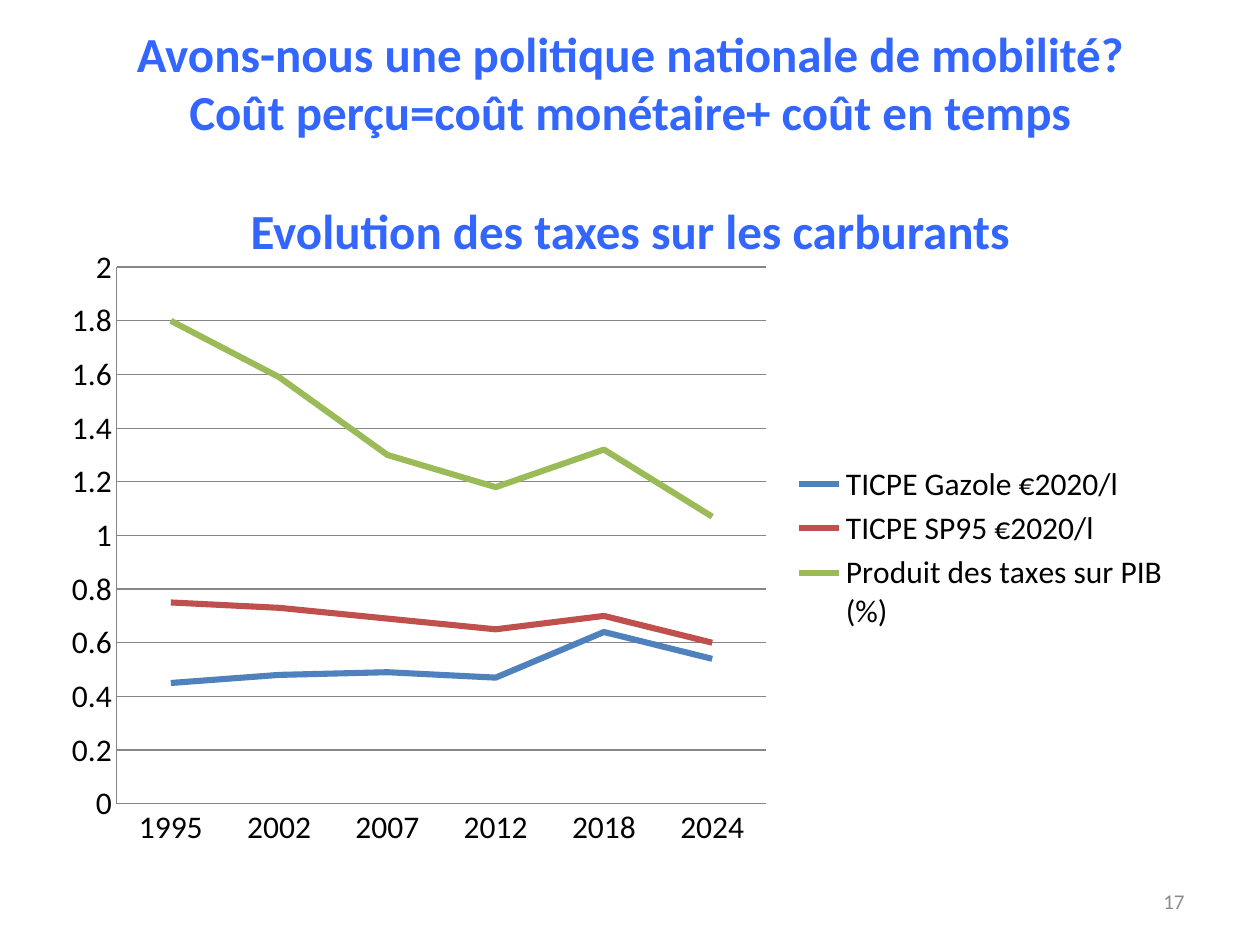
from dataclasses import dataclass

from pptx import Presentation
from pptx.chart.data import CategoryChartData
from pptx.dml.color import RGBColor
from pptx.enum.chart import XL_CHART_TYPE, XL_LEGEND_POSITION, XL_MARKER_STYLE, XL_TICK_MARK
from pptx.enum.text import MSO_ANCHOR, MSO_AUTO_SIZE, PP_ALIGN
from pptx.util import Inches, Pt

LINE = XL_CHART_TYPE.LINE
RIGHT = XL_LEGEND_POSITION.RIGHT
NO_MARK = XL_MARKER_STYLE.NONE
NO_TICK = XL_TICK_MARK.NONE
MIDDLE = MSO_ANCHOR.MIDDLE


@dataclass(frozen=True)
class Theme:
    face: str = "Calibri"
    head: str = "3366FF"
    ink: str = "000000"
    muted: str = "8C8C8C"
    grid: str = "868686"
    head_size: int = 28
    chart_size: int = 18
    note_size: int = 12


THEME = Theme()
YEARS = ["1995", "2002", "2007", "2012", "2018", "2024"]
TAXES = [
    ("TICPE Gazole €2020/l", "4F81BD", [0.45, 0.48, 0.49, 0.47, 0.64, 0.54]),
    ("TICPE SP95 €2020/l", "C0504D", [0.75, 0.73, 0.69, 0.65, 0.7, 0.6]),
    ("Produit des taxes sur PIB (%)", "9BBB59", [1.8, 1.59, 1.3, 1.18, 1.32, 1.07]),
]


def set_font(font, size, color, bold=False):
    font.name = THEME.face
    font.size = Pt(size)
    font.bold = bold
    font.color.rgb = RGBColor.from_string(color)


def set_line(line, color, width):
    line.color.rgb = RGBColor.from_string(color)
    line.width = Pt(width)


def write(frame, text, align, size, color, bold=False):
    frame.text = text
    frame.word_wrap = True
    frame.auto_size = MSO_AUTO_SIZE.NONE
    frame.vertical_anchor = MIDDLE
    for para in frame.paragraphs:
        para.alignment = align
        for run in para.runs:
            set_font(run.font, size, color, bold)


def add_title(slide):
    title = slide.shapes.title
    title.left, title.top = Inches(0.5), Inches(0.3)
    title.width, title.height = Inches(9), Inches(1.64)
    frame = title.text_frame
    write(
        frame,
        "Avons-nous une politique nationale de mobilité?\v"
        "Coût perçu=coût monétaire+ coût en temps\n"
        "Evolution des taxes sur les carburants",
        PP_ALIGN.CENTER, THEME.head_size, THEME.head, bold=True,
    )
    frame.paragraphs[0].space_before = Pt(0)
    frame.paragraphs[1].space_before = Pt(34)


def add_chart(slide):
    data = CategoryChartData()
    data.categories = YEARS
    for name, _, values in TAXES:
        data.add_series(name, values)
    chart = slide.shapes.add_chart(
        LINE, Inches(0.39), Inches(1.87), Inches(9), Inches(4.95), data
    ).chart
    chart.has_title = False
    set_font(chart.font, THEME.chart_size, THEME.ink)
    chart.has_legend = True
    chart.legend.position = RIGHT
    chart.legend.include_in_layout = False
    chart.plots[0].vary_by_categories = False
    for series, (_, color, _) in zip(chart.plots[0].series, TAXES):
        series.smooth = False
        series.marker.style = NO_MARK
        set_line(series.format.line, color, 3.5)
    style_axes(chart)


def style_axes(chart):
    for axis in (chart.category_axis, chart.value_axis):
        axis.major_tick_mark = axis.minor_tick_mark = NO_TICK
        set_line(axis.format.line, THEME.grid, 0.75)
    scale = chart.value_axis
    scale.minimum_scale, scale.maximum_scale, scale.major_unit = 0, 2, 0.2
    scale.tick_labels.number_format = "General"
    scale.tick_labels.number_format_is_linked = False
    scale.has_major_gridlines = True
    set_line(scale.major_gridlines.format.line, THEME.grid, 0.75)


def add_number(slide):
    box = slide.shapes.add_textbox(Inches(7.17), Inches(6.95), Inches(2.33), Inches(0.4))
    write(box.text_frame, "17", PP_ALIGN.RIGHT, THEME.note_size, THEME.muted)


def main():
    deck = Presentation()
    deck.slide_width, deck.slide_height = Inches(10), Inches(7.5)
    slide = deck.slides.add_slide(deck.slide_layouts[5])
    add_title(slide)
    add_chart(slide)
    add_number(slide)
    deck.save("out.pptx")


if __name__ == "__main__":
    main()
